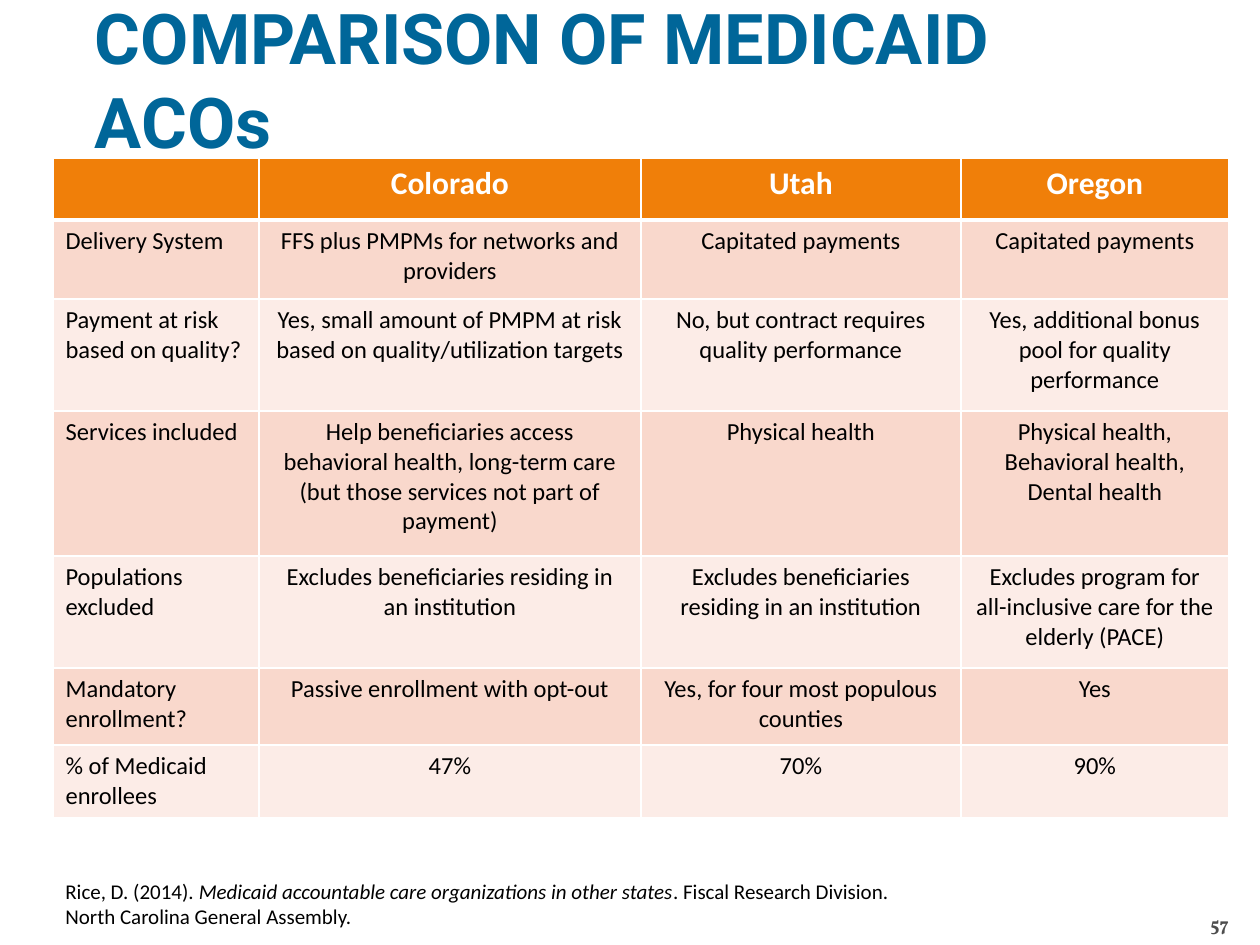
"""Build a slide that compares Medicaid ACOs in three states."""
from lxml.etree import SubElement
from pptx import Presentation
from pptx.dml.color import RGBColor
from pptx.enum.text import MSO_ANCHOR, MSO_AUTO_SIZE, PP_ALIGN
from pptx.oxml.ns import qn
from pptx.util import Pt

SCALE = 914400 / 126
TITLE = "COMPARISON OF MEDICAID ACOs"
ROWS = [
    ("", "Colorado", "Utah", "Oregon"),
    ("Delivery System", "FFS plus PMPMs for networks and providers",
     "Capitated payments", "Capitated payments"),
    ("Payment at risk based on quality?",
     "Yes, small amount of PMPM at risk based on quality/utilization targets",
     "No, but contract requires quality performance",
     "Yes, additional bonus pool for quality performance"),
    ("Services included",
     "Help beneficiaries access behavioral health, long-term care "
     "(but those services not part of payment)",
     "Physical health", "Physical health, Behavioral health, Dental health"),
    ("Populations excluded", "Excludes beneficiaries residing in an institution",
     "Excludes beneficiaries residing in an institution",
     "Excludes program for all-inclusive care for the elderly (PACE)"),
    ("Mandatory enrollment?", "Passive enrollment with opt-out",
     "Yes, for four most populous counties", "Yes"),
    ("% of Medicaid enrollees", "47%", "70%", "90%"),
]
COLUMN_WIDTHS = [206, 382, 320, 268]
ROW_HEIGHTS = [62, 79, 112, 145, 112, 77, 73]
HEADER_FILL, BAND_FILLS = "F07F09", ("F9D8CC", "FCECE7")
CITATION = [
    ("Rice, D. (2014). ", False),
    ("Medicaid accountable care organizations in other states", True),
    (". Fiscal Research Division. North Carolina General Assembly.", False),
]
PAGE_NUMBER = "57"

TITLE_FONT = dict(name="Roboto", size=Pt(40), bold=True, color="006699")
HEADER_FONT = dict(name="Calibri", size=Pt(18), bold=True, color="FFFFFF")
BODY_FONT = dict(name="Calibri", size=Pt(14), bold=False, color="000000")
CITATION_FONT = dict(name="Calibri", size=Pt(12), color="000000")
NUMBER_FONT = dict(name="Vollkorn", size=Pt(11), bold=True, color="4D4D4D")


def px(length):
    return round(length * SCALE)


def rgb(value):
    return RGBColor.from_string(value)


def add_span(para, text, style, **extra):
    span = para.add_run()
    span.text = text
    for key, value in {**style, **extra}.items():
        if key == "color":
            span.font.color.rgb = rgb(value)
        else:
            setattr(span.font, key, value)


def format_frame(frame, **values):
    for key, value in {"word_wrap": True, "auto_size": MSO_AUTO_SIZE.NONE, **values}.items():
        setattr(frame, key, value)


def add_border(cell, side, points):
    line = SubElement(cell._tc.get_or_add_tcPr(), qn(f"a:ln{side}"), w=str(Pt(points)))
    fill = SubElement(line, qn("a:solidFill"))
    SubElement(fill, qn("a:srgbClr"), val="FFFFFF")


def add_title(page):
    box = page.shapes.title
    box.left, box.top, box.width, box.height = map(px, (95, 0, 1071, 158))
    format_frame(box.text_frame, margin_left=0, margin_right=0,
                 vertical_anchor=MSO_ANCHOR.MIDDLE)
    para = box.text_frame.paragraphs[0]
    para.alignment = PP_ALIGN.LEFT
    add_span(para, TITLE, TITLE_FONT)


def add_comparison(page):
    place = map(px, (53, 158, sum(COLUMN_WIDTHS), sum(ROW_HEIGHTS)))
    table = page.shapes.add_table(len(ROWS), len(COLUMN_WIDTHS), *place).table
    for column, width in zip(table.columns, COLUMN_WIDTHS):
        column.width = px(width)
    for row, height in zip(table.rows, ROW_HEIGHTS):
        row.height = px(height)
    for row_index, texts in enumerate(ROWS):
        header = row_index == 0
        for column_index, text in enumerate(texts):
            cell = table.cell(row_index, column_index)
            for side in "LRTB":
                heavy = (row_index, side) in ((0, "B"), (1, "T"))
                add_border(cell, side, 3 if heavy else 1)
            cell.fill.solid()
            cell.fill.fore_color.rgb = rgb(
                HEADER_FILL if header else BAND_FILLS[(row_index - 1) % 2])
            para = cell.text_frame.paragraphs[0]
            para.alignment = PP_ALIGN.CENTER if column_index else PP_ALIGN.LEFT
            if text:
                add_span(para, text, HEADER_FONT if header else BODY_FONT)


def add_footer(page):
    box = page.shapes.add_textbox(*map(px, (1166, 885, 63, 50)))
    format_frame(box.text_frame, margin_left=0, margin_right=0, margin_bottom=0,
                 vertical_anchor=MSO_ANCHOR.BOTTOM)
    para = box.text_frame.paragraphs[0]
    para.alignment = PP_ALIGN.RIGHT
    add_span(para, PAGE_NUMBER, NUMBER_FONT)

    box = page.shapes.add_textbox(*map(px, (53, 872, 861, 63)))
    format_frame(box.text_frame, auto_size=MSO_AUTO_SIZE.SHAPE_TO_FIT_TEXT)
    for text, italic in CITATION:
        add_span(box.text_frame.paragraphs[0], text, CITATION_FONT, italic=italic)


def main():
    deck = Presentation()
    deck.slide_width, deck.slide_height = px(1260), px(945)
    page = deck.slides.add_slide(deck.slide_layouts[5])
    add_title(page)
    add_comparison(page)
    add_footer(page)
    deck.save("out.pptx")


if __name__ == "__main__":
    main()
